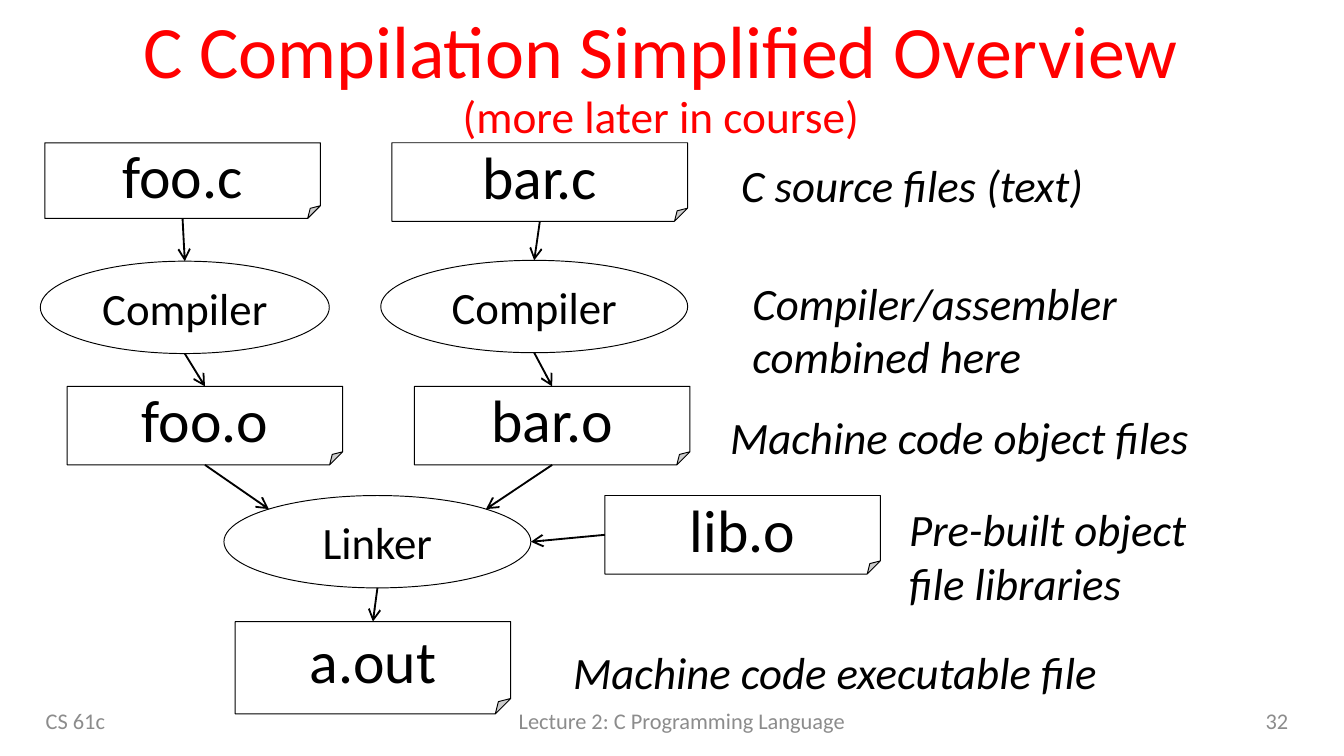
from dataclasses import dataclass

from lxml.etree import SubElement
from pptx import Presentation
from pptx.dml.color import RGBColor
from pptx.enum.shapes import MSO_CONNECTOR, MSO_SHAPE
from pptx.enum.text import MSO_ANCHOR, MSO_AUTO_SIZE, PP_ALIGN
from pptx.oxml.ns import qn
from pptx.util import Inches, Pt

# Grid: 120 columns by 90 rows over the whole slide
SLIDE_WIDTH, SLIDE_HEIGHT = Inches(10), Inches(5.625)
COLUMN, ROW = SLIDE_WIDTH / 120, SLIDE_HEIGHT / 90
FONT = "Calibri"
BLACK, WHITE, RED, GRAY = "000000", "FFFFFF", "FF0000", "8C8C8C"

# Arrow ends as shares of a shape's width and height
TOP, BOTTOM, LEFT, RIGHT = (0.5, 0), (0.5, 1), (0, 0.5), (1, 0.5)
UPPER_LEFT, UPPER_RIGHT = (0.146, 0.146), (0.854, 0.146)


@dataclass
class Box:
    column: float
    row: float
    columns: float
    rows: float

    def place(self) -> tuple:
        return (round(self.column * COLUMN), round(self.row * ROW),
                round(self.columns * COLUMN), round(self.rows * ROW))

    def point(self, share: tuple) -> tuple:
        return (round((self.column + share[0] * self.columns) * COLUMN),
                round((self.row + share[1] * self.rows) * ROW))


@dataclass
class Node:
    text: str
    box: Box
    is_file: bool = True


@dataclass
class Label:
    text: str
    box: Box
    size: float = 24
    color: str = BLACK
    italic: bool = True
    wrap: bool = True
    align: PP_ALIGN = PP_ALIGN.LEFT
    anchor: MSO_ANCHOR = MSO_ANCHOR.TOP


def rgb(color: str) -> RGBColor:
    return RGBColor.from_string(color)


def add_run(paragraph, text: str, size: float, color: str, italic: bool = False) -> None:
    run = paragraph.add_run()
    run.text = text
    run.font.name, run.font.size, run.font.italic = FONT, Pt(size), italic
    run.font.color.rgb = rgb(color)


def set_title(slide) -> None:
    title = slide.shapes.title
    title.left, title.top, title.width, title.height = Box(5, 1.9, 108, 15).place()
    frame = title.text_frame
    frame.auto_size = MSO_AUTO_SIZE.NONE
    frame.vertical_anchor = MSO_ANCHOR.MIDDLE
    paragraph = frame.paragraphs[0]
    paragraph.alignment, paragraph.line_spacing = PP_ALIGN.CENTER, 0.9
    add_run(paragraph, "C Compilation Simplified Overview", 39.6, RED)
    paragraph.add_line_break()
    add_run(paragraph, "(more later in course)", 24.3, RED)


def add_node(slide, node: Node) -> None:
    kind = MSO_SHAPE.FOLDED_CORNER if node.is_file else MSO_SHAPE.OVAL
    shape = slide.shapes.add_shape(kind, *node.box.place())
    shape.shadow.inherit = False
    shape.fill.solid()
    shape.fill.fore_color.rgb = rgb(WHITE)
    shape.line.color.rgb = rgb(BLACK)
    shape.line.width = Pt(0.5)
    shape.text_frame.word_wrap = True
    shape.text_frame.vertical_anchor = MSO_ANCHOR.MIDDLE
    paragraph = shape.text_frame.paragraphs[0]
    paragraph.alignment = PP_ALIGN.CENTER
    add_run(paragraph, node.text, 32 if node.is_file else 24, BLACK)


def add_arrow(slide, start: tuple, end: tuple) -> None:
    connector = slide.shapes.add_connector(MSO_CONNECTOR.STRAIGHT, *start, *end)
    connector.line.color.rgb = rgb(BLACK)
    connector.line.width = Pt(1)
    SubElement(connector.line._get_or_add_ln(), qn("a:tailEnd"), type="arrow")
    SubElement(connector._element.spPr, qn("a:effectLst"))


def add_label(slide, label: Label) -> None:
    frame = slide.shapes.add_textbox(*label.box.place()).text_frame
    frame.word_wrap = label.wrap
    frame.vertical_anchor = label.anchor
    paragraph = frame.paragraphs[0]
    paragraph.alignment = label.align
    add_run(paragraph, label.text, label.size, label.color, label.italic)


def footer(text: str, column: float, columns: float, align: PP_ALIGN) -> Label:
    return Label(text, Box(column, 83.4, columns, 4.8), 12, GRAY, False,
                 align=align, anchor=MSO_ANCHOR.MIDDLE)


# Files and tools, from source to executable
NODES = {
    "foo source": Node("foo.c", Box(4, 17, 24.6, 9)),
    "bar source": Node("bar.c", Box(35, 17, 26.4, 9.35)),
    "foo compiler": Node("Compiler", Box(3.6, 31.1, 25.8, 11), False),
    "bar compiler": Node("Compiler", Box(34, 31, 27.4, 11), False),
    "foo object": Node("foo.o", Box(6, 46, 24.6, 9.35)),
    "bar object": Node("bar.o", Box(37, 46, 24.6, 9.35)),
    "linker": Node("Linker", Box(20, 59, 27.4, 11), False),
    "library": Node("lib.o", Box(54, 59, 24.6, 9.35)),
    "executable": Node("a.out", Box(21, 74, 24.6, 11)),
}

ARROWS = [
    ("foo source", BOTTOM, "foo compiler", TOP),
    ("bar source", BOTTOM, "bar compiler", TOP),
    ("foo compiler", BOTTOM, "foo object", TOP),
    ("bar compiler", BOTTOM, "bar object", TOP),
    ("foo object", BOTTOM, "linker", UPPER_LEFT),
    ("bar object", BOTTOM, "linker", UPPER_RIGHT),
    ("library", LEFT, "linker", RIGHT),
    ("linker", BOTTOM, "executable", TOP),
]

# Captions beside the stages, then the footer
LABELS = [
    Label("C source files (text)", Box(65, 18, 34.3, 8), wrap=False),
    Label("Compiler/assembler combined here", Box(66, 32, 48, 14.5)),
    Label("Machine code object files", Box(64, 48, 44.8, 8), wrap=False),
    Label("Pre-built object file libraries", Box(80, 59, 29.8, 14.5)),
    Label("Machine code executable file", Box(50, 76, 50.9, 8), wrap=False),
    footer("CS 61c", 2.9, 29.5, PP_ALIGN.LEFT),
    footer("Lecture 2: C Programming Language", 35, 51.8, PP_ALIGN.CENTER),
    footer("32", 89.2, 27, PP_ALIGN.RIGHT),
]


def main() -> None:
    presentation = Presentation()
    presentation.slide_width, presentation.slide_height = SLIDE_WIDTH, SLIDE_HEIGHT
    slide = presentation.slides.add_slide(presentation.slide_layouts[5])
    set_title(slide)
    for node in NODES.values():
        add_node(slide, node)
    for source, leave, target, arrive in ARROWS:
        add_arrow(slide, NODES[source].box.point(leave), NODES[target].box.point(arrive))
    for label in LABELS:
        add_label(slide, label)
    presentation.save("out.pptx")


if __name__ == "__main__":
    main()
